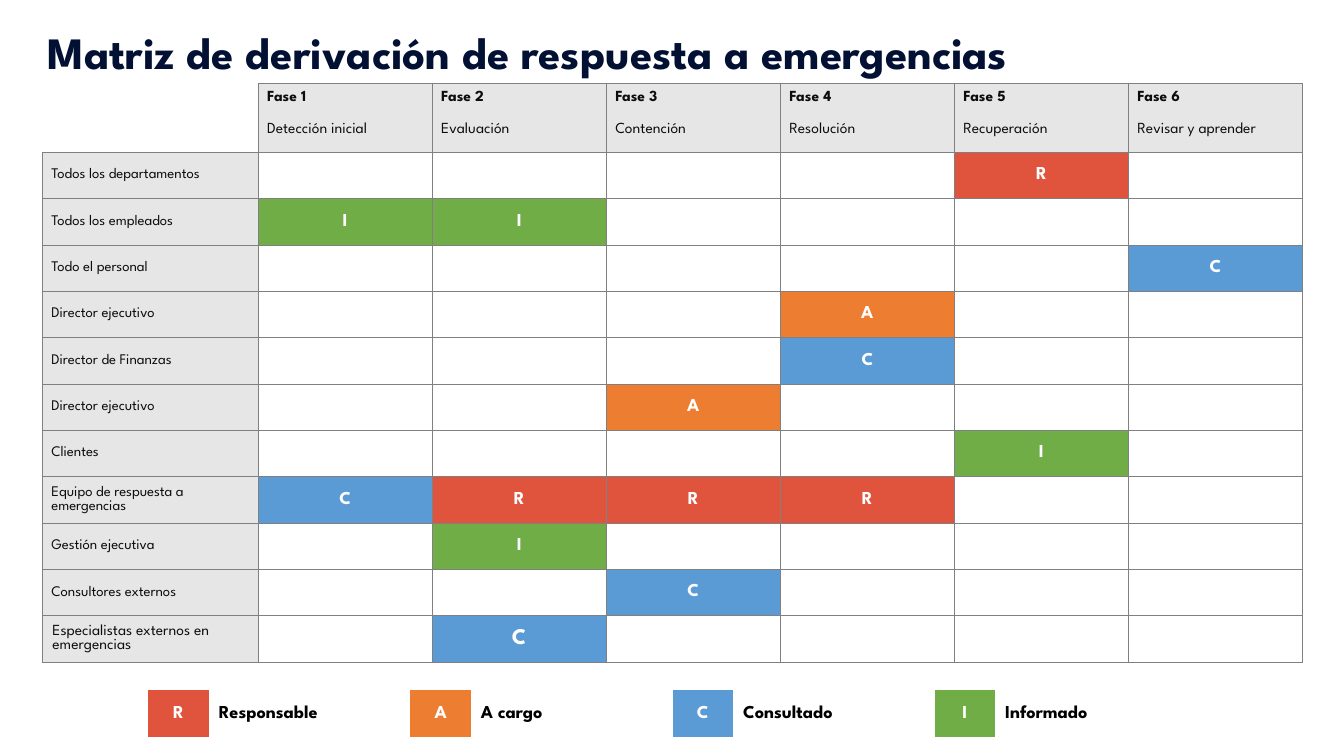
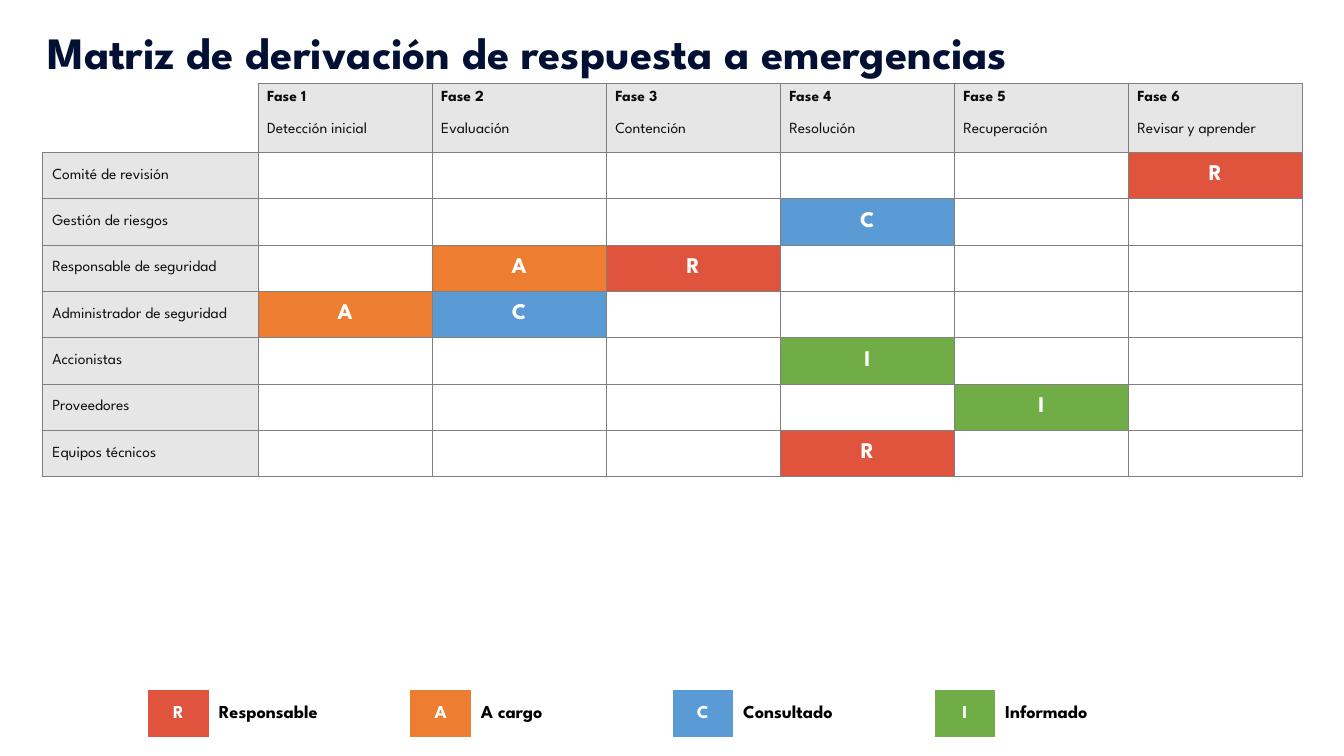
from dataclasses import dataclass

from lxml.etree import SubElement
from pptx import Presentation
from pptx.dml.color import RGBColor
from pptx.enum.text import MSO_ANCHOR, MSO_AUTO_SIZE, PP_ALIGN
from pptx.oxml import parse_xml
from pptx.oxml.ns import nsdecls, qn
from pptx.slide import Slide
from pptx.table import Table, _Cell
from pptx.util import Inches, Pt

FONT = "League Spartan"
NAVY, INK, BLACK, WHITE = "011033", "0D0D0D", "000000", "FFFFFF"
HEADER_GREY, GRID_GREY = "E7E6E6", "808080"
NO_STYLE = "{2D5ABB26-0587-4C30-8999-92F81FD0307C}"
TITLE = "Matriz de derivación de respuesta a emergencias"

MATRIX_LEFT, MATRIX_TOP, MATRIX_WIDTH = 0.42, 0.83, 12.5
ROLE_WIDTH, ROW_HEIGHT = 2.14, 0.46
HEADER_HEIGHTS = [0.29, 0.39]
LEGEND_LEFT, LEGEND_TOP = 1.47, 6.85
KEY_WIDTH, MEANING_WIDTH = 0.6, 2


@dataclass(frozen=True)
class Duty:
    meaning: str
    color: str


@dataclass(frozen=True)
class Role:
    """A row of the matrix; duties holds one letter per phase, or a dot."""
    name: str
    duties: str
    large: bool = True


@dataclass(frozen=True)
class TextStyle:
    size: float
    color: str = INK
    bold: bool = False
    align: PP_ALIGN = PP_ALIGN.LEFT
    anchor: MSO_ANCHOR = MSO_ANCHOR.MIDDLE
    inset: float = 0.09
    padding: float = 0


DUTIES = {
    "R": Duty("Responsable", "E0533C"),
    "A": Duty("A cargo", "ED7D31"),
    "C": Duty("Consultado", "5B9BD5"),
    "I": Duty("Informado", "70AD47"),
}
PHASES = ["Detección inicial", "Evaluación", "Contención",
          "Resolución", "Recuperación", "Revisar y aprender"]
PAGES = [
    [
        Role("Todos los departamentos", "....R.", False),
        Role("Todos los empleados", "II....", False),
        Role("Todo el personal", ".....C", False),
        Role("Director ejecutivo", "...A..", False),
        Role("Director de Finanzas", "...C..", False),
        Role("Director ejecutivo", "..A...", False),
        Role("Clientes", "....I.", False),
        Role("Equipo de respuesta a emergencias", "CRRR..", False),
        Role("Gestión ejecutiva", ".I....", False),
        Role("Consultores externos", "..C...", False),
        Role("Especialistas externos en emergencias", ".C...."),
    ],
    [
        Role("Comité de revisión", ".....R"),
        Role("Gestión de riesgos", "...C.."),
        Role("Responsable de seguridad", ".AR..."),
        Role("Administrador de seguridad", "AC...."),
        Role("Accionistas", "...I.."),
        Role("Proveedores", "....I."),
        Role("Equipos técnicos", "...R.."),
    ],
]

PHASE_NUMBER = TextStyle(11, bold=True)
PHASE_NAME = TextStyle(11, anchor=MSO_ANCHOR.TOP, padding=0.1)
MEANING = TextStyle(13, BLACK, bold=True, inset=0.1)


def rgb(color: str) -> RGBColor:
    return RGBColor.from_string(color)


def letter_style(size: float) -> TextStyle:
    return TextStyle(size, WHITE, True, PP_ALIGN.CENTER, inset=0.01)


def fill_cell(cell: _Cell, fill: str, text: str = "",
              style: TextStyle = PHASE_NUMBER, borders: str = "") -> None:
    """Format a cell; borders names the ruled sides, out of L, R, T and B."""
    cell.fill.solid()
    cell.fill.fore_color.rgb = rgb(fill)
    cell.vertical_anchor = style.anchor
    cell.margin_left, cell.margin_right = Inches(style.inset), Inches(0.01)
    cell.margin_top = cell.margin_bottom = Inches(style.padding)
    para = cell.text_frame.paragraphs[0]
    para.alignment = style.align
    font = para.font
    font.name, font.size, font.bold = FONT, Pt(style.size), style.bold
    font.color.rgb = rgb(style.color)
    if text:
        para.add_run().text = text
    else:
        SubElement(para._p, qn("a:endParaRPr"), sz=str(int(style.size * 100)))
    properties = cell._tc.get_or_add_tcPr()
    for position, side in enumerate(borders):
        properties.insert(position, parse_xml(
            f'<a:ln{side} {nsdecls("a")} w="6350"><a:solidFill>'
            f'<a:srgbClr val="{GRID_GREY}"/></a:solidFill></a:ln{side}>'))


def add_plain_table(page: Slide, left: float, top: float,
                    widths: list[float], heights: list[float]) -> Table:
    frame = page.shapes.add_table(
        len(heights), len(widths), Inches(left), Inches(top),
        Inches(sum(widths)), Inches(sum(heights)))
    table = frame.table
    table.first_row = table.horz_banding = False
    table._tbl.tblPr.find(qn("a:tableStyleId")).text = NO_STYLE
    for column, width in zip(table.columns, widths):
        column.width = Inches(width)
    for row, height in zip(table.rows, heights):
        row.height = Inches(height)
    return table


def add_title(page: Slide) -> None:
    title = page.shapes.title
    title.left, title.top = Inches(0.37), Inches(0.19)
    title.width, title.height = Inches(12), Inches(0.64)
    frame = title.text_frame
    frame.text = TITLE
    frame.word_wrap = True
    frame.auto_size = MSO_AUTO_SIZE.SHAPE_TO_FIT_TEXT
    frame.vertical_anchor = MSO_ANCHOR.TOP
    para = frame.paragraphs[0]
    para.alignment = PP_ALIGN.LEFT
    para.font.name, para.font.size, para.font.bold = FONT, Pt(32), True
    para.font.color.rgb = rgb(NAVY)


def add_matrix(page: Slide, roles: list[Role]) -> None:
    phase_width = (MATRIX_WIDTH - ROLE_WIDTH) / len(PHASES)
    table = add_plain_table(
        page, MATRIX_LEFT, MATRIX_TOP,
        [ROLE_WIDTH] + [phase_width] * len(PHASES),
        HEADER_HEIGHTS + [ROW_HEIGHT] * len(roles))
    fill_cell(table.cell(0, 0), WHITE, borders="R")
    fill_cell(table.cell(1, 0), WHITE, borders="RB")
    for column, phase in enumerate(PHASES, start=1):
        fill_cell(table.cell(0, column), HEADER_GREY, f"Fase {column}",
                  PHASE_NUMBER, "LRT")
        fill_cell(table.cell(1, column), HEADER_GREY, phase,
                  PHASE_NAME, "LRB")
    for row, role in enumerate(roles, start=len(HEADER_HEIGHTS)):
        name_style = (TextStyle(11, inset=0.1) if role.large
                      else TextStyle(10.5))
        fill_cell(table.cell(row, 0), HEADER_GREY, role.name,
                  name_style, "LRTB")
        duty_style = letter_style(16 if role.large else 13)
        for column, letter in enumerate(role.duties, start=1):
            cell = table.cell(row, column)
            if letter in DUTIES:
                fill_cell(cell, DUTIES[letter].color, letter,
                          duty_style, "LRTB")
            else:
                fill_cell(cell, WHITE, borders="LRTB")


def add_legend(page: Slide) -> None:
    table = add_plain_table(page, LEGEND_LEFT, LEGEND_TOP,
                            [KEY_WIDTH, MEANING_WIDTH] * len(DUTIES),
                            [ROW_HEIGHT])
    for index, (letter, duty) in enumerate(DUTIES.items()):
        fill_cell(table.cell(0, 2 * index), duty.color, letter,
                  letter_style(13))
        fill_cell(table.cell(0, 2 * index + 1), WHITE, duty.meaning, MEANING)


def main() -> None:
    deck = Presentation()
    deck.slide_width, deck.slide_height = Inches(13.33), Inches(7.5)
    title_only = deck.slide_layouts.get_by_name("Title Only")
    for roles in PAGES:
        page = deck.slides.add_slide(title_only)
        add_title(page)
        add_matrix(page, roles)
        add_legend(page)
    deck.save("out.pptx")


if __name__ == "__main__":
    main()
